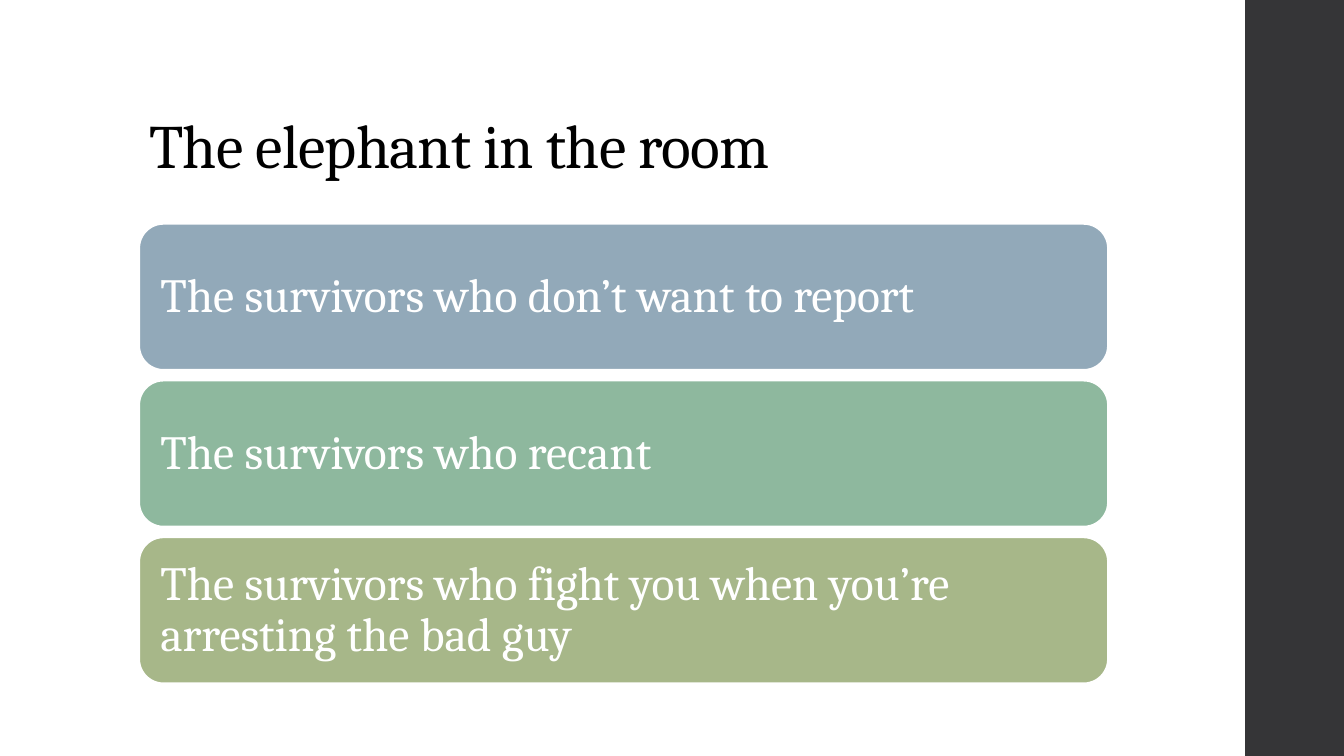
from pptx import Presentation
from pptx.dml.color import RGBColor
from pptx.enum.shapes import MSO_SHAPE as Shape
from pptx.enum.text import MSO_ANCHOR as Anchor, MSO_AUTO_SIZE as AutoSize, PP_ALIGN as Align
from pptx.util import Inches, Pt

FONT = "Cambria"
WHITE = "FFFFFF"
LEFT = 1.38
CARD_TOP, CARD_WIDTH, CARD_HEIGHT, CARD_STEP = 2.22, 9.61, 1.45, 1.555
CARDS = [
    ("The survivors who don’t want to report", "92A9B9"),
    ("The survivors who recant", "8EB89E"),
    ("The survivors who fight you when you’re arresting the bad guy", "A7B789"),
]


def color(value):
    return RGBColor.from_string(value)


def apply(target, values):
    for name, value in values.items():
        setattr(target, name, value)


def place(shape, left, top, width, height):
    apply(shape, {
        "left": Inches(left), "top": Inches(top),
        "width": Inches(width), "height": Inches(height),
    })


def write(shape, text, size, ink, anchor, margins):
    frame = shape.text_frame
    apply(frame, {"word_wrap": True, "auto_size": AutoSize.NONE, "vertical_anchor": anchor})
    apply(frame, {f"margin_{side}": Inches(value) for side, value in margins.items()})
    para = frame.paragraphs[0]
    apply(para, {"alignment": Align.LEFT, "line_spacing": 0.9})
    span = para.add_run()
    span.text = text
    apply(span.font, {"name": FONT, "size": Pt(size)})
    span.font.color.rgb = color(ink)
    return span


def add_block(page, kind, left, top, width, height, fill):
    block = page.shapes.add_shape(
        kind, Inches(left), Inches(top), Inches(width), Inches(height))
    block.shadow.inherit = False
    block.fill.solid()
    block.fill.fore_color.rgb = color(fill)
    block.line.fill.background()
    return block


def add_title(page, text):
    title = page.shapes.title
    place(title, LEFT, 0.4, 10.6, 1.45)
    margins = {"left": 0.1, "right": 0.1, "top": 0.05, "bottom": 0.05}
    span = write(title, text, 44, "000000", Anchor.BOTTOM, margins)
    span.font._element.set("spc", "-50")


def add_card(page, top, text, fill):
    card = add_block(page, Shape.ROUNDED_RECTANGLE, LEFT, top, CARD_WIDTH, CARD_HEIGHT, fill)
    card.line.color.rgb = color(WHITE)
    card.line.width = Pt(1.35)
    margins = dict.fromkeys(("left", "right", "top", "bottom"), 0.14)
    write(card, text, 34, WHITE, Anchor.MIDDLE, margins)


def main():
    deck = Presentation()
    apply(deck, {"slide_width": Inches(13.33), "slide_height": Inches(7.5)})
    page = deck.slides.add_slide(deck.slide_layouts[5])
    add_block(page, Shape.RECTANGLE, 12.35, 0, 0.98, 7.5, "353537")
    add_title(page, "The elephant in the room")
    for index, (text, fill) in enumerate(CARDS):
        add_card(page, CARD_TOP + index * CARD_STEP, text, fill)
    deck.save("out.pptx")


if __name__ == "__main__":
    main()
